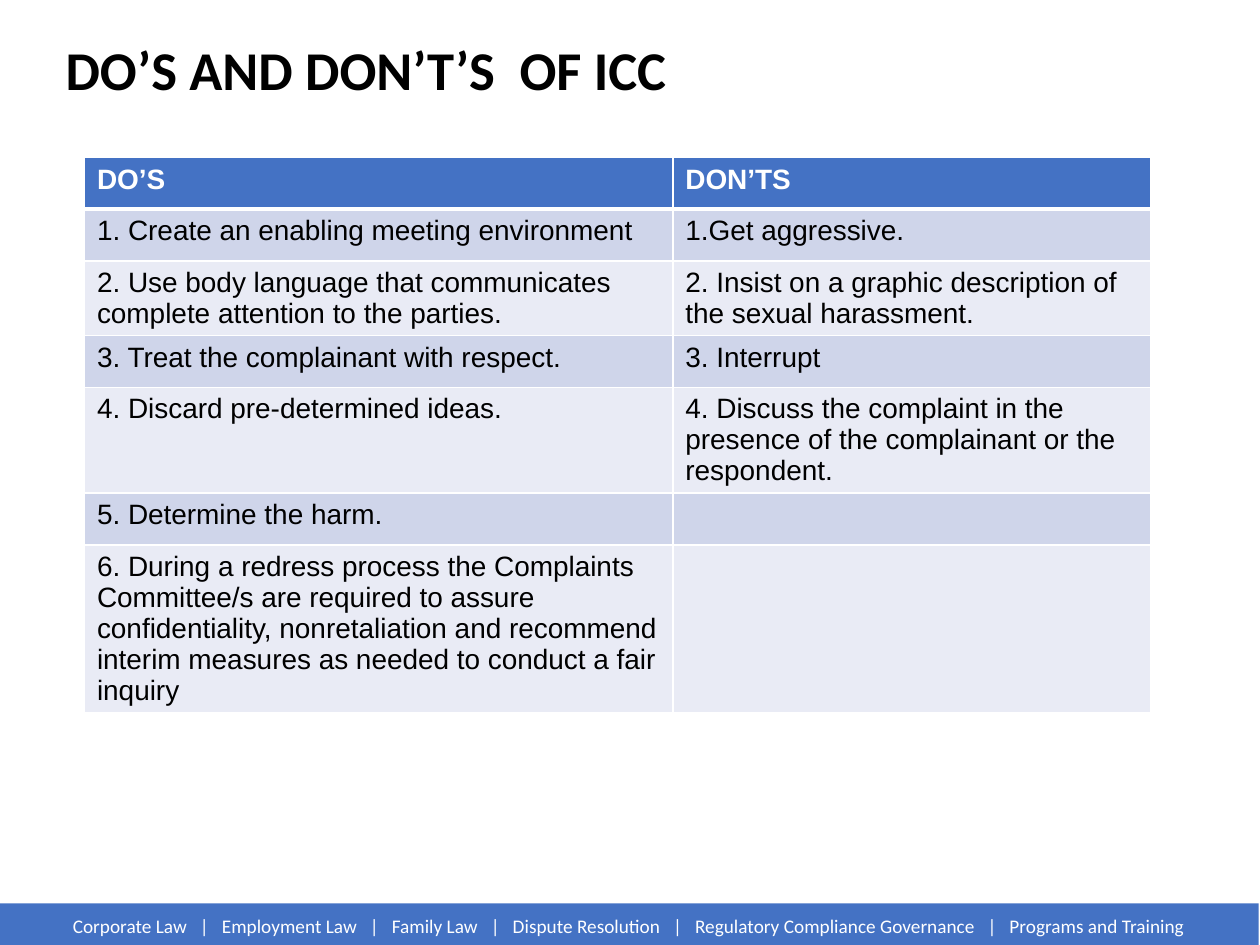
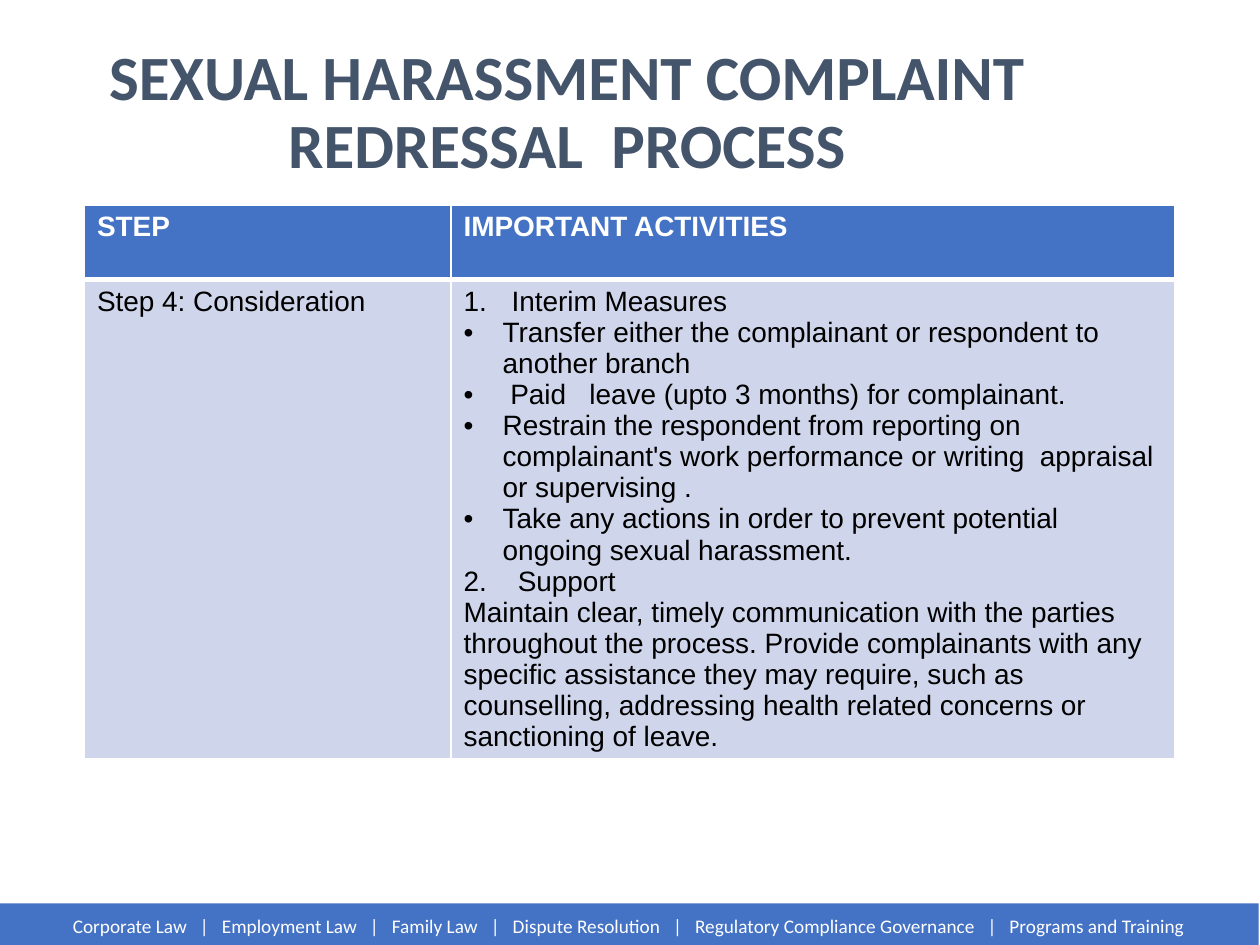
from dataclasses import dataclass

from lxml import etree
from pptx import Presentation
from pptx.dml.color import RGBColor
from pptx.enum.shapes import MSO_SHAPE
from pptx.enum.text import MSO_ANCHOR, MSO_AUTO_SIZE, PP_ALIGN
from pptx.oxml.ns import qn
from pptx.util import Inches, Pt

RECTANGLE = MSO_SHAPE.RECTANGLE
MIDDLE = MSO_ANCHOR.MIDDLE
NO_AUTOFIT = MSO_AUTO_SIZE.NONE
LEFT, CENTER = PP_ALIGN.LEFT, PP_ALIGN.CENTER

PRACTICE_AREAS = [
    "Corporate Law", "Employment Law", "Family Law", "Dispute Resolution",
    "Regulatory Compliance Governance", "Programs and Training",
]
BULLET = ("buChar", {"char": "•"}, 0.31)
SPACED_BULLET = ("buChar", {"char": "•"}, 0.37)
FIRST = ("buAutoNum", {"type": "arabicPeriod"}, 0.38)
SECOND = ("buAutoNum", {"type": "arabicPeriod", "startAt": "2"}, 0.43)

INTERIM_AND_SUPPORT = [
    ("Interim Measures", FIRST),
    ("Transfer either the complainant or respondent to another branch", BULLET),
    ("Paid   leave (upto 3 months) for complainant.", SPACED_BULLET),
    ("Restrain the respondent from reporting on complainant's work performance "
     "or writing  appraisal or supervising .", BULLET),
    ("Take any actions in order to prevent potential ongoing sexual harassment.", BULLET),
    ("Support", SECOND),
    ("Maintain clear, timely communication with the parties throughout the process. "
     "Provide complainants with any specific assistance they may require, such as "
     "counselling, addressing health related concerns or sanctioning of leave.", None),
]

SLIDES = [
    {
        "title": "DO’S AND DON’T’S  OF ICC",
        "title_box": (0.5, 0.04, 9, 0.94),
        "title_style": {"size": 31.2, "color": "000000", "align": LEFT,
                        "spacing": Pt(43), "insets": (0.02, 0.03)},
        "table_origin": (0.67, 1.25),
        "columns": [4.67, 3.79],
        "row_heights": [0.41] * 7,
        "rows": [
            ("DO’S", "DON’TS"),
            ("1. Create an enabling meeting environment", "1.Get aggressive."),
            ("2. Use body language that communicates complete attention to the parties.",
             "2. Insist on a graphic description of the sexual harassment."),
            ("3. Treat the complainant with respect.", "3. Interrupt"),
            ("4. Discard pre-determined ideas.",
             "4. Discuss the complaint in the presence of the complainant or the respondent."),
            ("5. Determine the harm.", ""),
            ("6. During a redress process the Complaints Committee/s are required to assure "
             "confidentiality, nonretaliation and recommend interim measures as needed to "
             "conduct a fair inquiry", ""),
        ],
    },
    {
        "title": "SEXUAL HARASSMENT COMPLAINT REDRESSAL  PROCESS",
        "title_box": (0.5, 0.18, 8, 1.45),
        "title_style": {"size": 36, "color": "44546A", "align": CENTER,
                        "spacing": 0.9, "insets": (0.1, 0.05)},
        "table_origin": (0.67, 1.63),
        "columns": [2.91, 5.74],
        "row_heights": [0.59, 0.97],
        "rows": [
            ("STEP", "IMPORTANT ACTIVITIES"),
            ("Step 4: Consideration", INTERIM_AND_SUPPORT),
        ],
    },
]


@dataclass(frozen=True)
class Theme:
    accent: str = "4472C4"
    stripes: tuple = ("CFD5EA", "E9EBF5")
    ink: str = "000000"
    light: str = "FFFFFF"
    heading_font: str = "Calibri"
    table_font: str = "Arial"
    table_size: float = 16
    footer_size: float = 11
    rule: float = 1
    header_rule: float = 3


THEME = Theme()
FOOTER_BOX = (0, 7.17, 9.99, 0.36)


def style_font(paragraph, family, size, color, bold=False):
    font = paragraph.font
    font.name, font.size, font.bold = family, Pt(size), bold
    font.color.rgb = RGBColor.from_string(color)


def paint(fill, color):
    fill.solid()
    fill.fore_color.rgb = RGBColor.from_string(color)


def add_title(slide, content):
    style = content["title_style"]
    title = slide.shapes.title
    title.left, title.top, title.width, title.height = map(Inches, content["title_box"])
    frame = title.text_frame
    frame.text = content["title"]
    frame.word_wrap, frame.auto_size = True, NO_AUTOFIT
    frame.vertical_anchor = MIDDLE
    side, edge = map(Inches, style["insets"])
    frame.margin_left = frame.margin_right = side
    frame.margin_top = frame.margin_bottom = edge
    heading = frame.paragraphs[0]
    heading.alignment, heading.line_spacing = style["align"], style["spacing"]
    style_font(heading, THEME.heading_font, style["size"], style["color"], True)


def add_footer(slide):
    band = slide.shapes.add_shape(RECTANGLE, *map(Inches, FOOTER_BOX))
    band.shadow.inherit = False
    paint(band.fill, THEME.accent)
    band.line.fill.background()
    frame = band.text_frame
    frame.text = "   |   ".join(PRACTICE_AREAS)
    frame.word_wrap, frame.vertical_anchor = True, MIDDLE
    areas = frame.paragraphs[0]
    areas.alignment = CENTER
    style_font(areas, THEME.heading_font, THEME.footer_size, THEME.light)


def add_marker(paragraph, marker):
    tag, attributes, indent = marker
    properties = paragraph._p.get_or_add_pPr()
    properties.set("marL", str(Inches(indent)))
    properties.set("indent", str(-Inches(indent)))
    etree.SubElement(properties, qn("a:buFont"), typeface=THEME.table_font)
    etree.SubElement(properties, qn(f"a:{tag}"), **attributes)


def add_borders(cell, widths):
    properties = cell._tc.get_or_add_tcPr()
    for position, (side, width) in enumerate(widths.items()):
        border = etree.Element(qn(f"a:ln{side}"), w=str(Pt(width)))
        solid = etree.SubElement(border, qn("a:solidFill"))
        etree.SubElement(solid, qn("a:srgbClr"), val=THEME.light)
        properties.insert(position, border)


def fill_cell(cell, entry, row):
    header = row == 0
    paint(cell.fill, THEME.accent if header else THEME.stripes[(row - 1) % 2])
    above = THEME.header_rule if row == 1 else THEME.rule
    below = THEME.header_rule if header else THEME.rule
    add_borders(cell, {"L": THEME.rule, "R": THEME.rule, "T": above, "B": below})
    items = [(entry, None)] if isinstance(entry, str) else entry
    frame = cell.text_frame
    frame.text = "\n".join(text for text, _ in items)
    for paragraph, (_, marker) in zip(frame.paragraphs, items):
        if marker:
            add_marker(paragraph, marker)
        style_font(paragraph, THEME.table_font, THEME.table_size,
                   THEME.light if header else THEME.ink, header)


def add_grid(slide, content):
    rows, columns, heights = content["rows"], content["columns"], content["row_heights"]
    left, top = content["table_origin"]
    table = slide.shapes.add_table(
        len(rows), len(columns), Inches(left), Inches(top),
        Inches(sum(columns)), Inches(sum(heights))).table
    for column, width in zip(table.columns, columns):
        column.width = Inches(width)
    for line, height in zip(table.rows, heights):
        line.height = Inches(height)
    for row, entries in enumerate(rows):
        for column, entry in enumerate(entries):
            fill_cell(table.cell(row, column), entry, row)


def main():
    deck = Presentation()
    deck.slide_width, deck.slide_height = Inches(10), Inches(7.5)
    title_only = deck.slide_layouts[5]
    for content in SLIDES:
        slide = deck.slides.add_slide(title_only)
        add_footer(slide)
        add_grid(slide, content)
        add_title(slide, content)
    deck.save("out.pptx")


if __name__ == "__main__":
    main()
